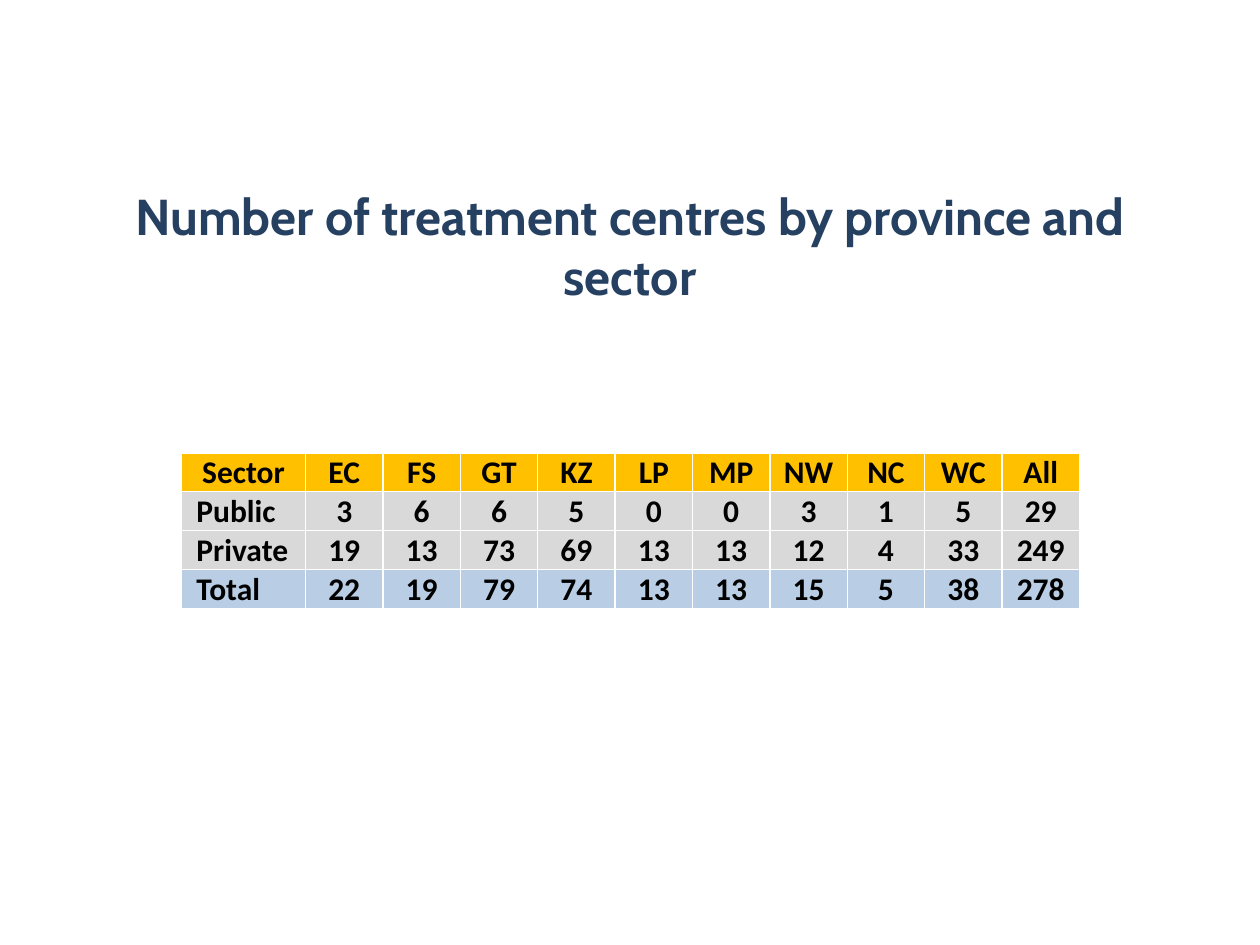
from lxml.etree import SubElement
from pptx import Presentation
from pptx.dml.color import RGBColor
from pptx.enum.text import MSO_ANCHOR, PP_ALIGN
from pptx.oxml.ns import qn
from pptx.util import Cm, Pt

NAVY = RGBColor(0x25, 0x40, 0x61)
BLACK = RGBColor(0x00, 0x00, 0x00)
WHITE = RGBColor(0xFF, 0xFF, 0xFF)
GOLD = RGBColor(0xFF, 0xC0, 0x00)
GREY = RGBColor(0xD9, 0xD9, 0xD9)
BLUE = RGBColor(0xB9, 0xCD, 0xE5)

HEADER = ["Sector", "EC", "FS", "GT", "KZ", "LP", "MP", "NW", "NC", "WC", "All"]
PUBLIC = ["Public", 3, 6, 6, 5, 0, 0, 3, 1, 5, 29]
PRIVATE = ["Private", 19, 13, 73, 69, 13, 13, 12, 4, 33, 249]
TOTAL = ["Total", 22, 19, 79, 74, 13, 13, 15, 5, 38, 278]
ROWS = [(HEADER, GOLD), (PUBLIC, GREY), (PRIVATE, GREY), (TOTAL, BLUE)]


def write(tf, text, font, size, color, align):
    """Fill a text frame with one bold paragraph."""
    tf.text = text
    p = tf.paragraphs[0]
    p.alignment = align
    f = p.runs[0].font
    f.name, f.size, f.bold = font, Pt(size), True
    f.color.rgb = color


def add_borders(cell, color, width):
    """Draw a solid line on all four sides of a cell."""
    tc_pr = cell._tc.get_or_add_tcPr()
    for side in ("lnL", "lnR", "lnT", "lnB"):
        ln = SubElement(tc_pr, qn(f"a:{side}"), w=str(Pt(width)))
        fill = SubElement(ln, qn("a:solidFill"))
        SubElement(fill, qn("a:srgbClr"), val=str(color))


def add_title(s, left, top, width, height):
    """Place the centred heading."""
    tf = s.shapes.add_textbox(left, top, width, height).text_frame
    tf.word_wrap = True
    tf.vertical_anchor = MSO_ANCHOR.MIDDLE
    write(tf, "Number of treatment centres by province and sector",
          "Cabin", 28.8, NAVY, PP_ALIGN.CENTER)


def add_centres_table(s, left, top, width, height):
    """Place the table of centres, with a wider first column."""
    table = s.shapes.add_table(len(ROWS), len(HEADER), left, top, width, height).table
    label_width = Cm(2.5)
    for j, col in enumerate(table.columns):
        col.width = (width - label_width) // (len(HEADER) - 1) if j else label_width
    for i, (values, color) in enumerate(ROWS):
        for j, value in enumerate(values):
            cell = table.cell(i, j)
            is_label = i > 0 and j == 0
            cell.margin_left = Cm(0.3 if is_label else 0.02)
            cell.margin_right = cell.margin_top = Cm(0.02)
            cell.margin_bottom = 0
            cell.vertical_anchor = MSO_ANCHOR.MIDDLE
            write(cell.text_frame, str(value), "Calibri", 18, BLACK,
                  PP_ALIGN.LEFT if is_label else PP_ALIGN.CENTER)
            add_borders(cell, WHITE, 1)
            cell.fill.solid()
            cell.fill.fore_color.rgb = color


def main():
    """Build the slide and save it."""
    prs = Presentation()
    prs.slide_width, prs.slide_height = Cm(25.4), Cm(19.05)
    s = prs.slides.add_slide(prs.slide_layouts[6])
    add_title(s, Cm(2.3), Cm(3.97), Cm(20.8), Cm(1.95))
    add_centres_table(s, Cm(3.66), Cm(9.13), Cm(18.1), Cm(3.13))
    prs.save("out.pptx")


if __name__ == "__main__":
    main()
